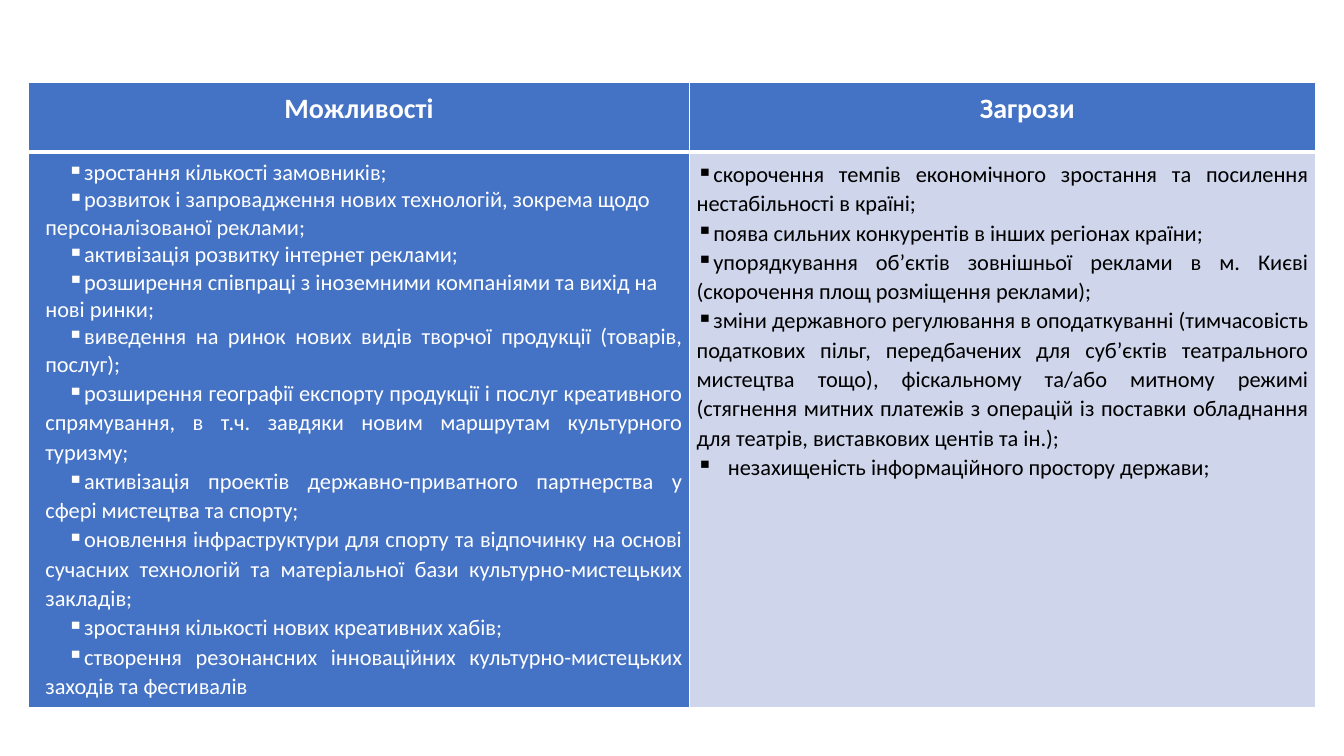
from lxml.etree import SubElement
from pptx import Presentation
from pptx.dml.color import RGBColor
from pptx.enum.text import MSO_ANCHOR as Anchor, PP_ALIGN as Align
from pptx.oxml.ns import qn
from pptx.util import Inches, Pt

THEME = {
    "font": "Calibri",
    "blue": "4472C4",
    "pale": "CFD5EA",
    "white": "FFFFFF",
    "black": "000000",
    "heading": 20,
    "body": 16,
}


def add_text(para, text, size=THEME["body"], color=THEME["white"], bold=False,
             align=Align.JUSTIFY, spacing=None, margin=0, indent=0, bullet="▪", tabs=(0.2,)):
    para.alignment = align
    if spacing:
        para.line_spacing = spacing
    span = para.add_run()
    span.text = text
    span.font.name = THEME["font"]
    span.font.size = Pt(size)
    span.font.bold = bold
    span.font.color.rgb = RGBColor.from_string(color)
    props = para._p.get_or_add_pPr()
    props.set("marL", str(Inches(margin)))
    props.set("indent", str(Inches(indent)))
    if bullet:
        SubElement(props, qn("a:buChar"), char=bullet)
    else:
        SubElement(props, qn("a:buNone"))
    stops = SubElement(props, qn("a:tabLst"))
    for tab in tabs:
        SubElement(stops, qn("a:tab"), pos=str(Inches(tab)), algn="l")


def style_cell(cell, fill, top=1, bottom=1):
    cell.margin_left = cell.margin_right = Inches(0.07)
    cell.margin_top = cell.margin_bottom = Inches(0.07)
    cell.vertical_anchor = Anchor.TOP
    props = cell._tc.get_or_add_tcPr()
    for side, width in (("L", 1), ("R", 1), ("T", top), ("B", bottom)):
        line = SubElement(props, qn(f"a:ln{side}"), w=str(Pt(width)))
        paint = SubElement(line, qn("a:solidFill"))
        SubElement(paint, qn("a:srgbClr"), val=THEME["white"])
    cell.fill.solid()
    cell.fill.fore_color.rgb = RGBColor.from_string(fill)


loose = {"spacing": 1.07}
ragged = {"align": Align.LEFT}
wide = {"spacing": 1.07, "tabs": (0.2, 0.31)}

opportunities = [
    ("зростання кількості замовників;", {}),
    ("розвиток і запровадження нових технологій, зокрема щодо персоналізованої реклами;", ragged),
    ("активізація розвитку інтернет реклами;", ragged),
    ("розширення співпраці з іноземними компаніями та вихід на нові ринки;", ragged),
    ("виведення на ринок нових видів творчої продукції (товарів, послуг);", {"tabs": (0.31,)}),
    ("розширення географії експорту продукції і послуг креативного спрямування, "
     "в т.ч. завдяки новим маршрутам культурного туризму;", wide),
    ("активізація проектів державно-приватного партнерства у сфері мистецтва та спорту;", wide),
    ("оновлення інфраструктури для спорту та відпочинку на основі сучасних технологій "
     "та матеріальної бази культурно-мистецьких закладів;", wide),
    ("зростання кількості нових креативних хабів;", wide),
    ("створення резонансних інноваційних культурно-мистецьких заходів та фестивалів", wide),
]
threats = [
    ("скорочення темпів економічного зростання та посилення нестабільності в країні;", loose),
    ("поява сильних конкурентів в інших регіонах країни;", loose),
    ("упорядкування об’єктів зовнішньої реклами в м. Києві "
     "(скорочення площ розміщення реклами);", loose),
    ("зміни державного регулювання в оподаткуванні (тимчасовість податкових пільг, "
     "передбачених для суб’єктів театрального мистецтва тощо), фіскальному та/або митному "
     "режимі (стягнення митних платежів з операцій із поставки обладнання для театрів, "
     "виставкових центів та ін.);", {"spacing": 1.07, "tabs": (0.22,)}),
    ("незахищеність інформаційного простору держави;",
     {"spacing": 1.07, "margin": 0.31, "indent": -0.31, "tabs": (0.32,)}),
]
columns = [
    ("Можливості", 0, 6.56, opportunities, THEME["blue"],
     {"color": THEME["white"], "margin": 0.1, "indent": 0.22}),
    ("Загрози", 0.49, 6.21, threats, THEME["pale"], {"color": THEME["black"]}),
]

deck = Presentation()
deck.slide_width, deck.slide_height = Inches(13.33), Inches(7.5)
page = deck.slides.add_slide(deck.slide_layouts[6])
table = page.shapes.add_table(2, 2, Inches(0.28), Inches(0.82), Inches(12.77), Inches(6.13)).table
for row, height in zip(table.rows, (0.69, 5.44)):
    row.height = Inches(height)

for index, (heading, heading_indent, width, items, fill, style) in enumerate(columns):
    table.columns[index].width = Inches(width)
    head, body = table.cell(0, index), table.cell(1, index)
    style_cell(head, THEME["blue"], bottom=3)
    style_cell(body, fill, top=3)
    add_text(head.text_frame.paragraphs[0], heading, size=THEME["heading"], bold=True,
             align=Align.CENTER, spacing=1.07, indent=heading_indent, bullet=None)
    frame = body.text_frame
    for number, (text, options) in enumerate(items):
        para = frame.add_paragraph() if number else frame.paragraphs[0]
        add_text(para, text, **{**style, **options})

deck.save("out.pptx")
